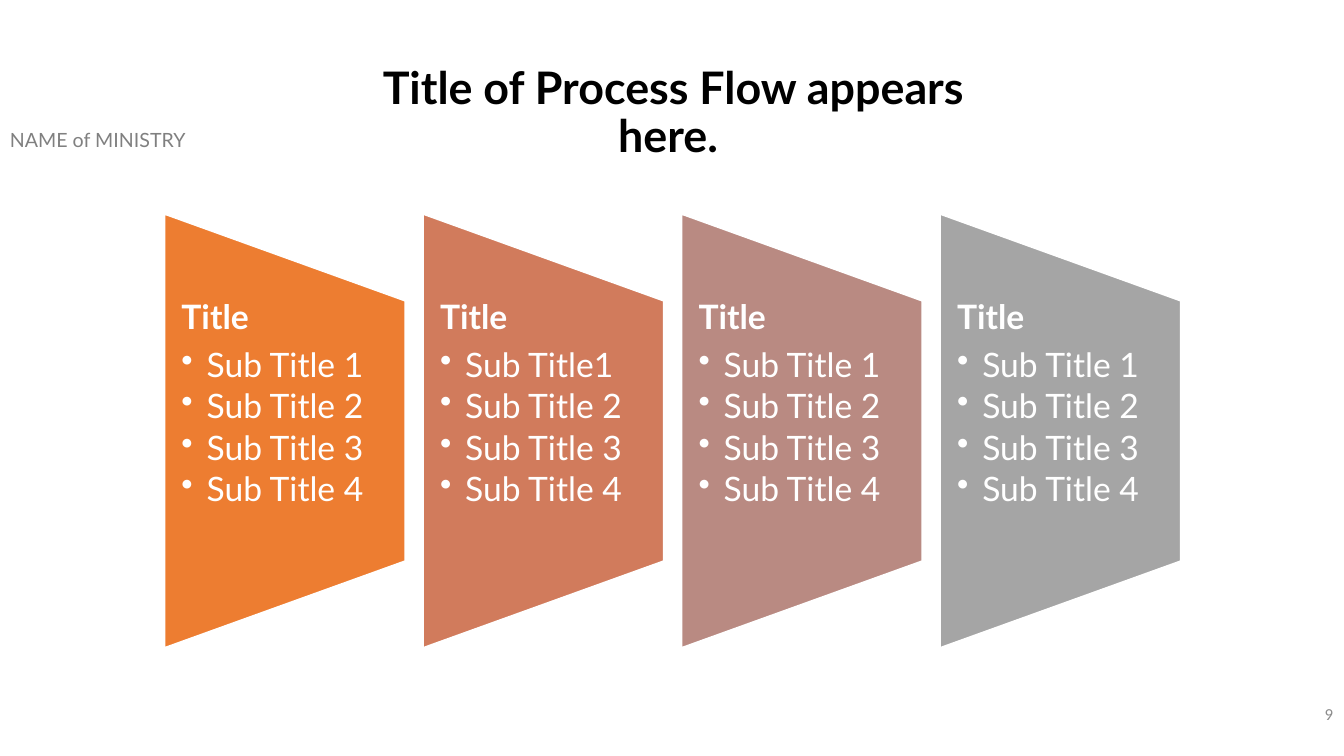
from lxml import etree
from pptx import Presentation
from pptx.dml.color import RGBColor
from pptx.enum import shapes, text
from pptx.oxml.ns import qn
from pptx.util import Inches, Pt

# Content
HEADING = "Title of Process Flow appears here. "
MINISTRY = "NAME of MINISTRY"
PAGE_NUMBER = "9"
STEPS = [
    ("ED7D31", "Title", ["Sub Title 1", "Sub Title 2", "Sub Title 3", "Sub Title 4"]),
    ("D17B5C", "Title", ["Sub Title1", "Sub Title 2", "Sub Title 3", "Sub Title 4"]),
    ("B98A82", "Title", ["Sub Title 1", "Sub Title 2", "Sub Title 3", "Sub Title 4"]),
    ("A5A5A5", "Title", ["Sub Title 1", "Sub Title 2", "Sub Title 3", "Sub Title 4"]),
]

THEME = {
    "font": "Lato", "number_font": "Calibri",
    "heading": "000000", "ministry": "808080", "number": "8C8C8C", "on_step": "FFFFFF",
    "heading_size": 32, "step_size": 24, "ministry_size": 14, "number_size": 12,
}

# Layout in inches
FLOW_LEFT, STEP_PITCH = 1.63, 2.564
STEP_WIDTH, STEP_HEIGHT, STEP_CENTER_Y = 2.39, 4.31, 4.275
STEP_TEXT_TOP, STEP_TEXT_HEIGHT = 2.98, 2.59
BULLET_INDENT = 0.25


def add_box(slide, left, top, width, height, margins=(0.1, 0.05)):
    box = slide.shapes.add_textbox(Inches(left), Inches(top), Inches(width), Inches(height))
    frame = box.text_frame
    frame.word_wrap = True
    frame.margin_left = frame.margin_right = Inches(margins[0])
    frame.margin_top = frame.margin_bottom = Inches(margins[1])
    return frame


def add_run(paragraph, words, size, color, bold=False, font=THEME["font"]):
    run = paragraph.add_run()
    run.text = words
    run.font.name = font
    run.font.size = Pt(size)
    run.font.bold = bold
    run.font.color.rgb = RGBColor.from_string(color)


def add_bullet(paragraph):
    properties = paragraph._p.get_or_add_pPr()
    properties.set("marL", str(Inches(BULLET_INDENT)))
    properties.set("indent", str(-Inches(BULLET_INDENT)))
    etree.SubElement(properties, qn("a:buChar")).set("char", "•")


def add_step(slide, left, color, title, subtitles):
    # Trapezoid turned a quarter, so its wide side faces left
    panel = slide.shapes.add_shape(
        shapes.MSO_SHAPE.FLOWCHART_MANUAL_OPERATION,
        Inches(left + (STEP_WIDTH - STEP_HEIGHT) / 2),
        Inches(STEP_CENTER_Y - STEP_WIDTH / 2),
        Inches(STEP_HEIGHT), Inches(STEP_WIDTH))
    panel.rotation = 270
    panel.shadow.inherit = False
    panel.fill.solid()
    panel.fill.fore_color.rgb = RGBColor.from_string(color)
    panel.line.color.rgb = RGBColor.from_string(THEME["on_step"])
    panel.line.width = Pt(1.5)

    # Title and bulleted subtitles
    frame = add_box(slide, left, STEP_TEXT_TOP, STEP_WIDTH, STEP_TEXT_HEIGHT, (0.17, 0))
    for row, words in enumerate([title, *subtitles]):
        is_title = row == 0
        paragraph = frame.paragraphs[0] if is_title else frame.add_paragraph()
        paragraph.line_spacing = 0.9
        paragraph.space_after = Pt(THEME["step_size"] * (0.35 if is_title else 0.15))
        if not is_title:
            paragraph.level = 1
            add_bullet(paragraph)
        add_run(paragraph, words, THEME["step_size"], THEME["on_step"], bold=is_title)


def main():
    deck = Presentation()
    deck.slide_width, deck.slide_height = Inches(13.33), Inches(7.5)
    slide = deck.slides.add_slide(deck.slide_layouts[6])

    # Ministry name and page number
    ministry = add_box(slide, 0, 1.22, 2.9, 0.34).paragraphs[0]
    add_run(ministry, MINISTRY, THEME["ministry_size"], THEME["ministry"])

    number_frame = add_box(slide, 10.32, 6.88, 3, 0.4)
    number_frame.vertical_anchor = text.MSO_ANCHOR.MIDDLE
    number = number_frame.paragraphs[0]
    number.alignment = text.PP_ALIGN.RIGHT
    add_run(number, PAGE_NUMBER, THEME["number_size"], THEME["number"],
            font=THEME["number_font"])

    # Process steps
    for index, (color, title, subtitles) in enumerate(STEPS):
        add_step(slide, FLOW_LEFT + index * STEP_PITCH, color, title, subtitles)

    # Heading
    heading = add_box(slide, 3.28, 0.6, 6.8, 1.07).paragraphs[0]
    heading.alignment = text.PP_ALIGN.CENTER
    heading.line_spacing = 0.9
    add_run(heading, HEADING, THEME["heading_size"], THEME["heading"], bold=True)

    deck.save("out.pptx")


if __name__ == "__main__":
    main()
